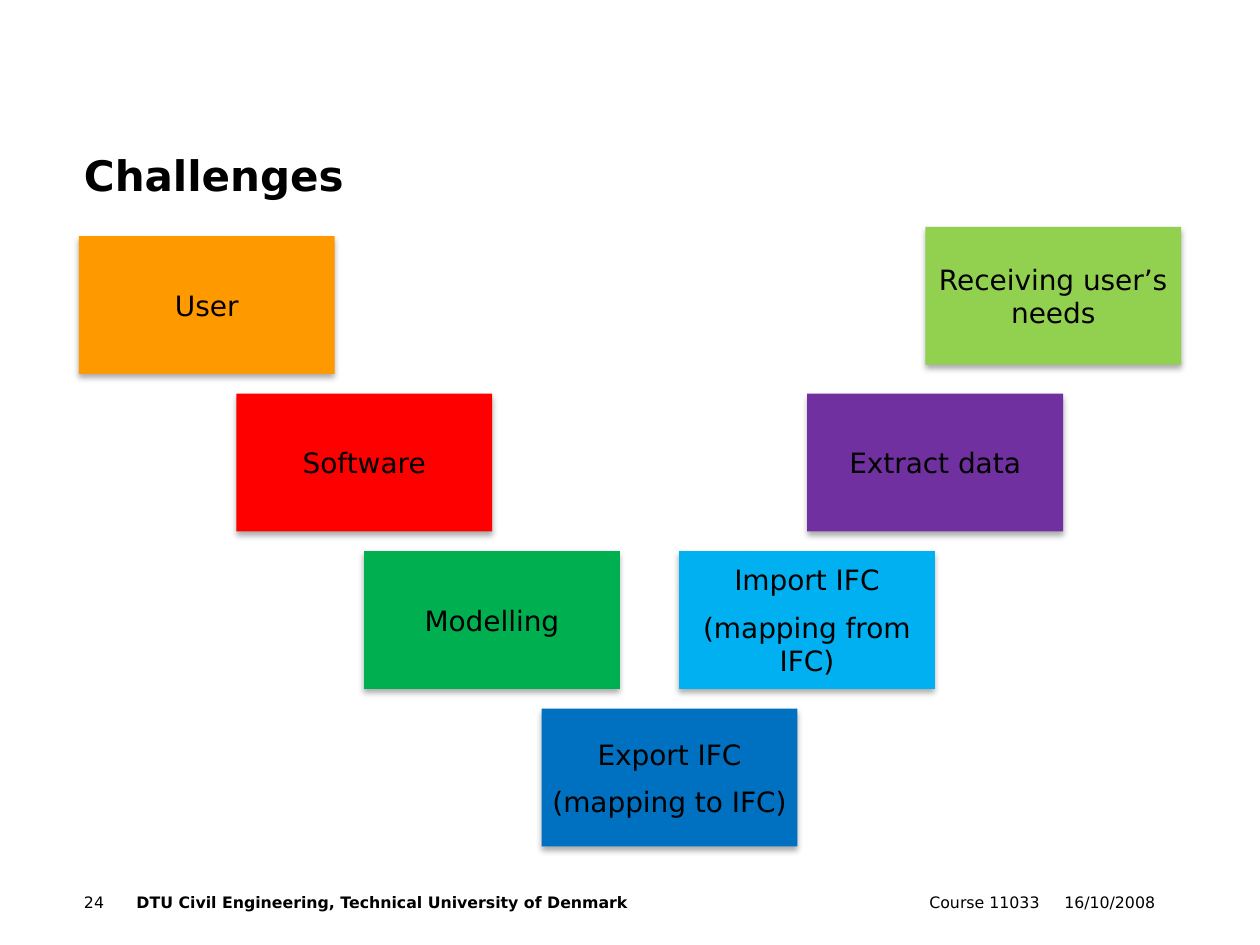
from dataclasses import dataclass

from lxml import etree
from pptx import Presentation
from pptx.dml.color import RGBColor
from pptx.enum.shapes import MSO_SHAPE
from pptx.enum.text import MSO_ANCHOR, MSO_AUTO_SIZE, PP_ALIGN
from pptx.oxml import parse_xml
from pptx.util import Pt

RECTANGLE = MSO_SHAPE.RECTANGLE
TOP, MIDDLE, BOTTOM = MSO_ANCHOR.TOP, MSO_ANCHOR.MIDDLE, MSO_ANCHOR.BOTTOM
LEFT, CENTER, RIGHT = PP_ALIGN.LEFT, PP_ALIGN.CENTER, PP_ALIGN.RIGHT
NO_FIT = MSO_AUTO_SIZE.NONE
TITLE_ONLY = 5


@dataclass(frozen=True)
class Theme:
    font: str = "DejaVu Sans"
    text: str = "000000"
    title_size: int = 24
    stage_size: int = 16
    footer_size: int = 9
    orange: str = "FF9900"
    red: str = "FF0000"
    green: str = "00B050"
    blue: str = "0070C0"
    sky: str = "00B0F0"
    purple: str = "7030A0"
    lime: str = "92D050"


theme = Theme()


def write_text(box, text, size, align=LEFT, anchor=TOP, bold=False, gap=0):
    frame = box.text_frame
    frame.text = text
    frame.word_wrap = True
    frame.auto_size = NO_FIT
    frame.vertical_anchor = anchor
    frame.margin_left = frame.margin_right = 0
    frame.margin_top = frame.margin_bottom = 0
    for index, para in enumerate(frame.paragraphs):
        para.alignment = align
        para.space_before = Pt(gap if index else 0)
        for span in para.runs:
            span.font.name = theme.font
            span.font.size = Pt(size)
            span.font.bold = bold
            span.font.color.rgb = RGBColor.from_string(theme.text)


def add_shadow(box):
    box.shadow.inherit = False
    effects = box.element.spPr.find("{*}effectLst")
    namespace = etree.QName(effects).namespace
    effects.append(parse_xml(
        f'<a:outerShdw xmlns:a="{namespace}" blurRad="{Pt(3.5)}" dist="{Pt(2.2)}" '
        'dir="5400000" algn="ctr" rotWithShape="0"><a:srgbClr val="000000">'
        '<a:alpha val="32000"/></a:srgbClr></a:outerShdw>'
    ))


deck = Presentation()
deck.slide_width, deck.slide_height = Pt(720), Pt(540)
page = deck.slides.add_slide(deck.slide_layouts[TITLE_ONLY])

title = page.shapes.title
title.left, title.top, title.width, title.height = Pt(48), Pt(24), Pt(612), Pt(90)
write_text(title, "Challenges", theme.title_size, anchor=BOTTOM, bold=True)

first_top, row_step = 135, 90
stage_width, stage_height = 146.25, 78.75
stages = [
    ("User", 45, 0, theme.orange),
    ("Software", 135, 1, theme.red),
    ("Modelling", 208, 2, theme.green),
    ("Export IFC\n(mapping to IFC)", 309.5, 3, theme.blue),
    ("Import IFC\n(mapping from IFC)", 388, 2, theme.sky),
    ("Extract data", 461.25, 1, theme.purple),
    ("Receiving user’s needs", 528.75, -0.06, theme.lime),
]
for text, left, row, color in stages:
    stage = page.shapes.add_shape(
        RECTANGLE, Pt(left), Pt(first_top + row * row_step), Pt(stage_width), Pt(stage_height)
    )
    stage.fill.solid()
    stage.fill.fore_color.rgb = RGBColor.from_string(color)
    stage.line.fill.background()
    add_shadow(stage)
    write_text(stage, text, theme.stage_size, align=CENTER, anchor=MIDDLE, gap=8)

footers = [
    ("24", 48, 24, LEFT, False),
    ("DTU Civil Engineering, Technical University of Denmark", 78, 291, LEFT, True),
    ("Course 11033", 378, 216, RIGHT, False),
    ("16/10/2008", 600, 60, RIGHT, False),
]
for text, left, width, align, bold in footers:
    footer = page.shapes.add_textbox(Pt(left), Pt(510), Pt(width), Pt(24))
    write_text(footer, text, theme.footer_size, align=align, bold=bold)

deck.save("out.pptx")
